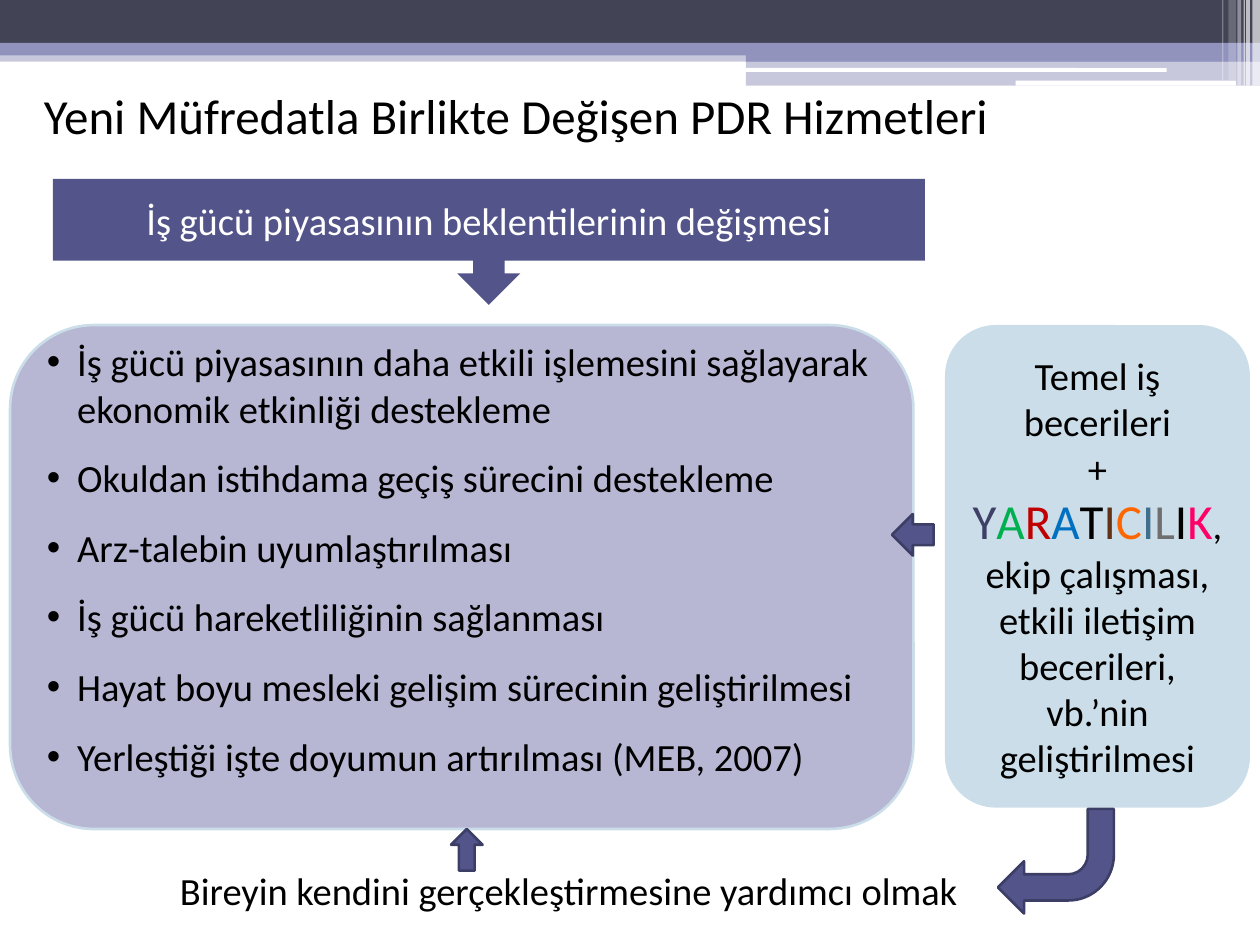
import lxml.etree
import pptx
import pptx.util
import pptx.dml.color
import pptx.enum.shapes
import pptx.enum.text
import pptx.oxml.ns

Inches, Pt = pptx.util.Inches, pptx.util.Pt
SHAPE = pptx.enum.shapes.MSO_SHAPE
ALIGN = pptx.enum.text.PP_ALIGN
MIDDLE = pptx.enum.text.MSO_ANCHOR.MIDDLE
TOP = pptx.enum.text.MSO_ANCHOR.TOP

COLORS = {
    "dark": "424456", "band": "9293BD", "white": "FFFFFF", "black": "000000",
    "indigo": "53548A", "outline": "3D3E66", "lilac": "B7B7D4", "ice": "CBDDE8",
    "navy": "3F4068", "green": "00B050", "red": "C00000", "blue": "0070C0",
    "brown": "623217", "orange": "FF6600", "steel": "406F8D", "gray": "6F6F6F",
    "pink": "FF0066",
}

# Header bars: left, top, width, height, colour, opacity in percent
HEADER_BARS = [
    (0, 0.4, 10, 0.09, "band", 50),
    (0, 0, 10, 0.34, "dark", 100),
    (0, 0.34, 10, 0.1, "band", 100),
    (5.92, 0.39, 4.08, 0.1, "band", 100),
    (5.92, 0.48, 4.08, 0.2, "band", 50),
]
HEADER_LINES = [(5.91, 0.54, 3.35, 0.03), (8.06, 0.64, 1.75, 0.04)]
# Thin stripes at the right edge: left, width, height, opacity in percent
STRIPES = [
    (9.94, 0.06, 0.68, 65), (9.89, 0.03, 0.68, 65), (9.87, 0.01, 0.68, 60),
    (9.82, 0.03, 0.68, 40), (9.75, 0.06, 0.64, 20), (9.7, 0.01, 0.64, 30),
]

GOALS = [
    "İş gücü piyasasının daha etkili işlemesini sağlayarak ekonomik etkinliği destekleme",
    "Okuldan istihdama geçiş sürecini destekleme",
    "Arz-talebin uyumlaştırılması",
    "İş gücü hareketliliğinin sağlanması",
    "Hayat boyu mesleki gelişim sürecinin geliştirilmesi",
    "Yerleştiği işte doyumun artırılması (MEB, 2007)",
]
CREATIVITY = "YARATICILIK"
LETTER_COLORS = ["navy", "green", "red", "blue", "black", "brown",
                 "orange", "steel", "gray", "black", "pink"]

# Block arrows: preset, frame, rotation
ARROWS = [
    (SHAPE.LEFT_ARROW, (7.08, 4.08, 0.33, 0.33), 0),
    (SHAPE.BENT_ARROW, (7.92, 6.42, 0.92, 0.83), 180),
    (SHAPE.UP_ARROW, (3.58, 6.58, 0.25, 0.33), 0),
]


def rgb(name):
    return pptx.dml.color.RGBColor.from_string(COLORS[name])


def set_values(target, values):
    for name, value in values.items():
        setattr(target, name, value)


def add_element(parent, tag, key, value):
    lxml.etree.SubElement(parent, pptx.oxml.ns.qn(tag)).set(key, value)


def add_block(page, preset, frame, fill, line=None, opacity=100):
    block = page.shapes.add_shape(preset, *map(Inches, frame))
    block.shadow.inherit = False
    block.fill.solid()
    block.fill.fore_color.rgb = rgb(fill)
    if opacity < 100:
        color = block._element.spPr.find(".//" + pptx.oxml.ns.qn("a:srgbClr"))
        add_element(color, "a:alpha", "val", str(opacity * 1000))
    if line:
        block.line.color.rgb = rgb(line)
        block.line.width = Pt(1.5)
    else:
        block.line.fill.background()
    return block


def add_span(para, text, size=22, color="black"):
    span = para.add_run()
    span.text = text
    set_values(span.font, {"name": "Calibri", "size": Pt(size)})
    span.font.color.rgb = rgb(color)


def fill_text(box, paragraphs, align=ALIGN.LEFT, anchor=MIDDLE, gap=0):
    """Each paragraph is a list of (text, size, color) spans."""
    frame = box.text_frame
    set_values(frame, {"word_wrap": True, "vertical_anchor": anchor})
    for index, spans in enumerate(paragraphs):
        para = frame.add_paragraph() if index else frame.paragraphs[0]
        set_values(para, {"alignment": align, "space_before": Pt(gap if index else 0)})
        for span in spans:
            add_span(para, *span)
    return frame


def add_label(page, frame, text, size, anchor):
    box = page.shapes.add_textbox(*map(Inches, frame))
    fill_text(box, [[(text, size)]], anchor=anchor)


def add_bullet(para):
    properties = para._p.get_or_add_pPr()
    properties.set("marL", str(Inches(0.24)))
    properties.set("indent", str(-Inches(0.24)))
    add_element(properties, "a:buFont", "typeface", "Arial")
    add_element(properties, "a:buChar", "char", "•")


def add_header(page):
    for *frame, color, opacity in HEADER_BARS:
        add_block(page, SHAPE.RECTANGLE, frame, color, opacity=opacity)
    for frame in HEADER_LINES:
        add_block(page, SHAPE.ROUNDED_RECTANGLE, frame, "white")
    for left, width, height, opacity in STRIPES:
        add_block(page, SHAPE.RECTANGLE, (left, 0, width, height), "white", opacity=opacity)


def add_goals(page):
    box = add_block(page, SHAPE.ROUNDED_RECTANGLE, (0.08, 2.58, 7.17, 4), "lilac", "ice")
    frame = fill_text(box, [[(goal,)] for goal in GOALS], gap=13.4)
    set_values(frame, {"margin_top": Inches(0.05), "margin_bottom": Inches(0.34)})
    for para in frame.paragraphs:
        add_bullet(para)


def add_skills(page):
    box = add_block(page, SHAPE.ROUNDED_RECTANGLE, (7.5, 2.58, 2.42, 3.83), "ice")
    letters = [(letter, 28, color) for letter, color in zip(CREATIVITY, LETTER_COLORS)]
    rest = (", ekip çalışması, etkili iletişim becerileri, vb.’nin geliştirilmesi",)
    fill_text(box, [[("Temel iş becerileri",)], [("+",)], letters + [rest]], ALIGN.CENTER)


def main():
    deck = pptx.Presentation()
    set_values(deck, {"slide_width": Inches(10), "slide_height": Inches(7.5)})
    page = deck.slides.add_slide(deck.slide_layouts[6])

    # Header and title
    add_header(page)
    add_label(page, (0.25, 0.33, 9.75, 1.17),
              "Yeni Müfredatla Birlikte Değişen PDR Hizmetleri", 28, MIDDLE)

    # Cause, goals and skills
    callout = add_block(page, SHAPE.DOWN_ARROW_CALLOUT, (0.42, 1.42, 6.92, 1), "indigo")
    fill_text(callout, [[("İş gücü piyasasının beklentilerinin değişmesi", 22, "white")]],
              ALIGN.CENTER)
    add_goals(page)
    add_skills(page)

    # Purpose and arrows
    add_label(page, (1.33, 6.83, 6.75, 0.47),
              "Bireyin kendini gerçekleştirmesine yardımcı olmak", 22, TOP)
    for preset, frame, rotation in ARROWS:
        add_block(page, preset, frame, "indigo", "outline").rotation = rotation

    deck.save("out.pptx")


if __name__ == "__main__":
    main()
